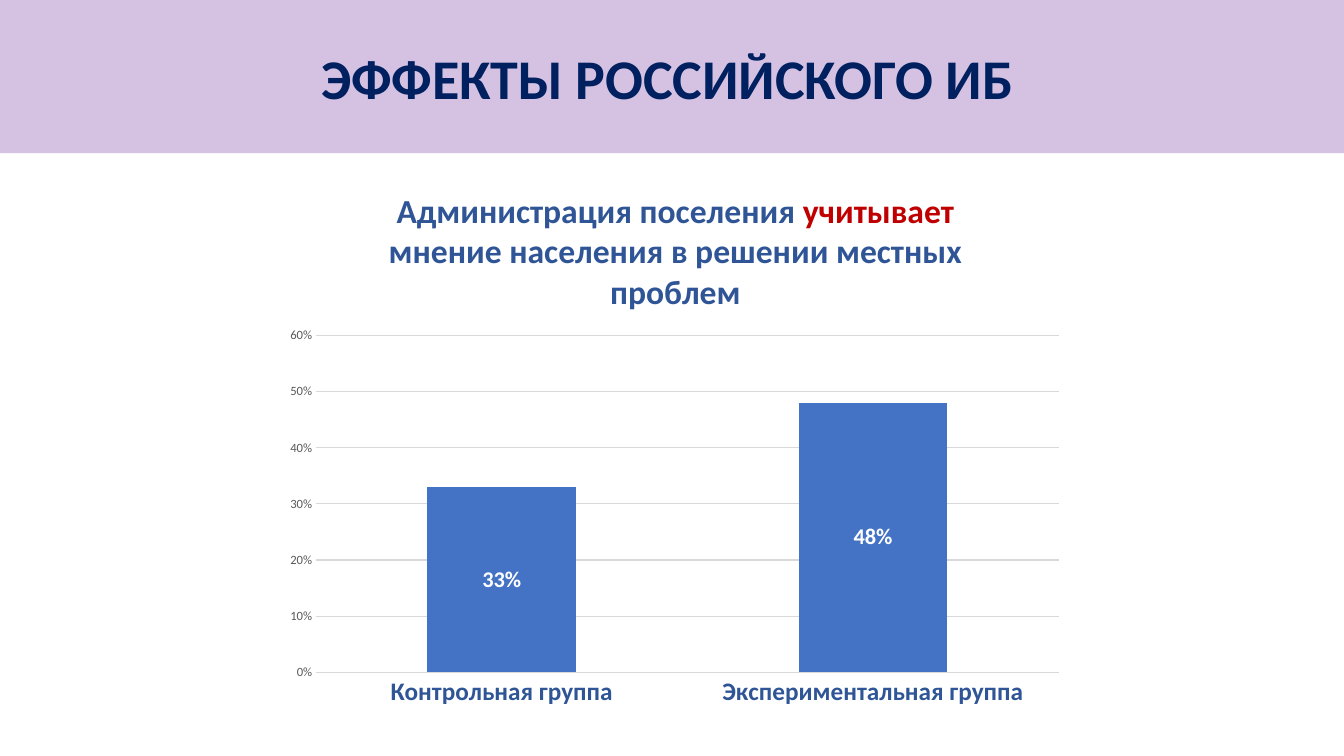
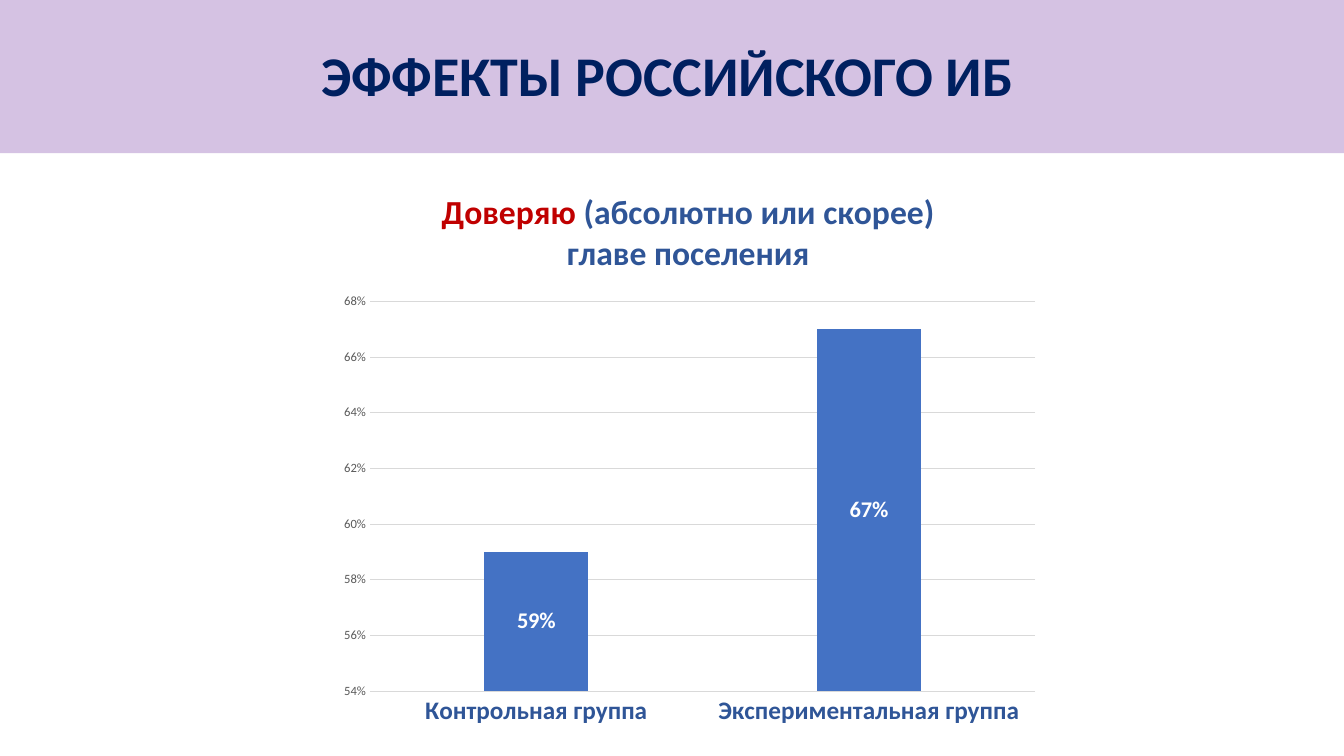
import pptx
import pptx.chart.data
import pptx.dml.color
import pptx.enum.chart
import pptx.enum.shapes
import pptx.enum.text
import pptx.oxml
import pptx.oxml.ns
import pptx.util

COLORS = {
    "band": "7030A0",
    "heading": "002060",
    "caption": "2F5597",
    "accent": "C00000",
    "bar": "4472C4",
    "label": "FFFFFF",
    "scale": "595959",
    "grid": "D9D9D9",
}
FONT = "Calibri"
BAND_OPACITY = 29
BAND_ROWS = 20.25
GROUPS = ["Контрольная группа", "Экспериментальная группа"]
STACKED = pptx.enum.chart.XL_CHART_TYPE.COLUMN_STACKED
CLUSTERED = pptx.enum.chart.XL_CHART_TYPE.COLUMN_CLUSTERED


def color(name):
    return pptx.dml.color.RGBColor.from_string(COLORS[name])


class Deck:
    """Style and current slide; lengths are on a grid of 100 columns by 100 rows."""

    def __init__(self):
        self.presentation = pptx.Presentation()
        self.presentation.slide_width = pptx.util.Inches(13.33)
        self.presentation.slide_height = pptx.util.Inches(7.5)
        self.slide = None

    def box(self, left, top, width, height):
        """Turn columns and rows into slide lengths."""
        column = self.presentation.slide_width / 100
        row = self.presentation.slide_height / 100
        return [round(length) for length in
                (left * column, top * row, width * column, height * row)]

    def style_font(self, font, size, name, bold=False):
        font.name = FONT
        font.size = pptx.util.Pt(size)
        font.bold = bold
        font.color.rgb = color(name)

    def style_line(self, line):
        line.color.rgb = color("grid")
        line.width = pptx.util.Pt(0.75)

    def add_slide(self, heading, heading_rows):
        self.slide = self.presentation.slides.add_slide(
            self.presentation.slide_layouts[6])
        self.add_band()
        self.add_heading(heading, heading_rows)

    def add_band(self):
        band = self.slide.shapes.add_shape(
            pptx.enum.shapes.MSO_SHAPE.RECTANGLE, *self.box(0, 0, 100, BAND_ROWS))
        band.shadow.inherit = False
        band.fill.solid()
        band.fill.fore_color.rgb = color("band")
        band.line.fill.background()
        fill_color = band.fill._xPr.find(".//" + pptx.oxml.ns.qn("a:srgbClr"))
        alpha = fill_color.makeelement(
            pptx.oxml.ns.qn("a:alpha"), {"val": str(BAND_OPACITY * 1000)})
        fill_color.append(alpha)

    def add_heading(self, text, rows):
        shape = self.slide.shapes.add_textbox(*self.box(7.4, -7.07, 84.5, rows))
        frame = shape.text_frame
        frame.word_wrap = True
        frame.vertical_anchor = pptx.enum.text.MSO_ANCHOR.MIDDLE
        paragraph = frame.paragraphs[0]
        paragraph.text = text
        paragraph.alignment = pptx.enum.text.PP_ALIGN.CENTER
        paragraph.line_spacing = 0.9
        self.style_font(paragraph.font, 40, "heading", bold=True)

    def add_column_chart(self, kind, place, title, values, scale, gap, overlap, plot):
        """Draw a chart; scale is low, high and step, plot is shares of the chart."""
        data = pptx.chart.data.CategoryChartData(number_format="0%")
        data.categories = GROUPS
        data.add_series("Series 1", values)
        chart = self.slide.shapes.add_chart(kind, *self.box(*place), data).chart
        chart.has_legend = False
        chart.font.name = FONT
        chart.font.size = pptx.util.Pt(10)
        self.style_title(chart, title)
        self.style_axes(chart, *scale)
        self.style_columns(chart.plots[0], gap, overlap)
        self.place_plot(chart, plot)

    def style_title(self, chart, parts):
        chart.has_title = True
        chart.chart_title.include_in_layout = False
        paragraph = chart.chart_title.text_frame.paragraphs[0]
        for text, name in parts:
            run = paragraph.add_run()
            run.text = text
            self.style_font(run.font, 24, name, bold=True)

    def style_axes(self, chart, low, high, step):
        for axis in (chart.category_axis, chart.value_axis):
            axis.major_tick_mark = pptx.enum.chart.XL_TICK_MARK.NONE
            axis.minor_tick_mark = pptx.enum.chart.XL_TICK_MARK.NONE
        self.style_font(chart.category_axis.tick_labels.font, 18, "caption", bold=True)
        self.style_line(chart.category_axis.format.line)

        value_axis = chart.value_axis
        value_axis.minimum_scale = low
        value_axis.maximum_scale = high
        value_axis.major_unit = step
        value_axis.format.line.fill.background()
        value_axis.has_major_gridlines = True
        self.style_line(value_axis.major_gridlines.format.line)
        self.style_font(value_axis.tick_labels.font, 9, "scale")
        value_axis.tick_labels.number_format = "0%"
        value_axis.tick_labels.number_format_is_linked = False

    def style_columns(self, plot, gap, overlap):
        plot.vary_by_categories = False
        plot.gap_width = gap
        plot.overlap = overlap
        series = plot.series[0]
        series.format.fill.solid()
        series.format.fill.fore_color.rgb = color("bar")
        labels = series.data_labels
        labels.show_value = True
        labels.number_format = "0%"
        labels.number_format_is_linked = False
        labels.position = pptx.enum.chart.XL_LABEL_POSITION.CENTER
        self.style_font(labels.font, 16, "label", bold=True)

    def place_plot(self, chart, shares):
        area = chart._chartSpace.chart.plotArea
        for layout in area.findall(pptx.oxml.ns.qn("c:layout")):
            area.remove(layout)
        settings = [("layoutTarget", "inner"), ("xMode", "edge"), ("yMode", "edge"),
                    *zip("xywh", shares)]
        content = "".join(f'<c:{tag} val="{value}"/>' for tag, value in settings)
        area.insert(0, pptx.oxml.parse_xml(
            f'<c:layout {pptx.oxml.ns.nsdecls("c")}>'
            f"<c:manualLayout>{content}</c:manualLayout></c:layout>"))


def main():
    deck = Deck()
    heading = "ЭФФЕКТЫ РОССИЙСКОГО ИБ"

    deck.add_slide(heading, heading_rows=35.7)
    deck.add_column_chart(
        STACKED, place=(20.55, 22.5, 59.4, 73),
        title=[("Администрация поселения ", "caption"), ("учитывает", "accent"),
               (" мнение населения в решении местных проблем", "caption")],
        values=[0.33, 0.48], scale=(0, 0.6, 0.1), gap=150, overlap=100,
        plot=(0.05, 0.3, 0.93, 0.61))

    deck.add_slide(heading, heading_rows=34.9)
    deck.add_column_chart(
        CLUSTERED, place=(24.3, 22.7, 53.8, 74.7),
        title=[("Доверяю", "accent"),
               (" (абсолютно или скорее) главе поселения", "caption")],
        values=[0.59, 0.67], scale=(0.54, 0.68, 0.02), gap=219, overlap=-27,
        plot=(0.06, 0.23, 0.92, 0.69))

    deck.presentation.save("out.pptx")


if __name__ == "__main__":
    main()
